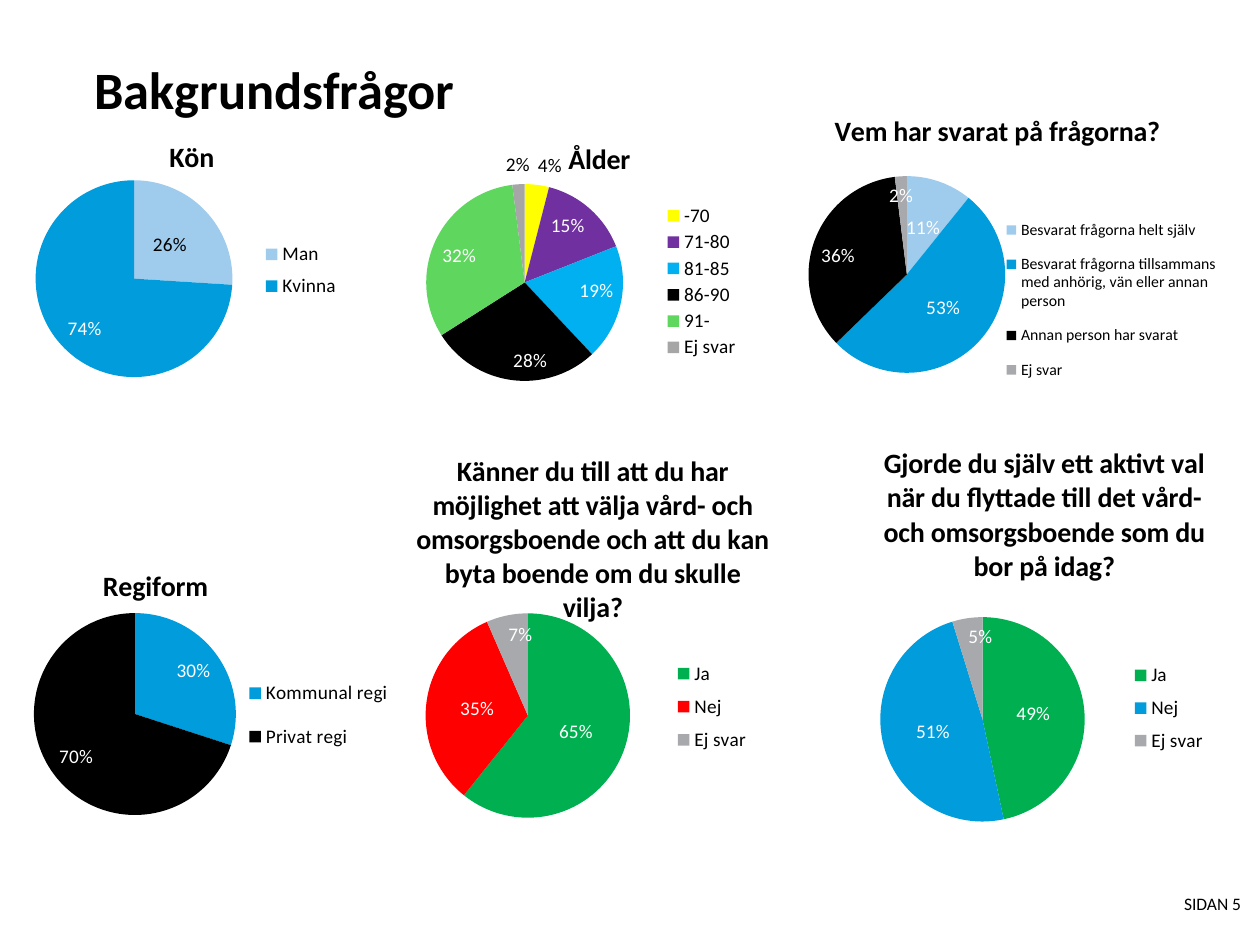
from dataclasses import dataclass

from lxml.etree import Element, SubElement
from pptx import Presentation
from pptx.chart.data import CategoryChartData
from pptx.dml.color import RGBColor
from pptx.enum.chart import XL_CHART_TYPE, XL_LABEL_POSITION, XL_LEGEND_POSITION
from pptx.enum.text import MSO_ANCHOR, PP_ALIGN
from pptx.oxml.ns import qn
from pptx.util import Pt


@dataclass(frozen=True)
class Theme:
    font: str = "Calibri"
    heading_size: int = 30
    chart_title_size: int = 16
    label_size: int = 11
    small_size: int = 9
    footer_size: int = 10
    black: str = "000000"
    white: str = "FFFFFF"
    light_blue: str = "9FCBED"
    blue: str = "009CDC"
    sky: str = "00B0F0"
    gray: str = "A7A9AC"
    mid_gray: str = "A6A6A6"
    green: str = "00B050"
    lime: str = "5FD75F"
    red: str = "FF0000"
    yellow: str = "FFFF00"
    purple: str = "7030A0"


theme = Theme()
CENTER = XL_LABEL_POSITION.CENTER
INSIDE = XL_LABEL_POSITION.INSIDE_END
OUTSIDE = XL_LABEL_POSITION.OUTSIDE_END


def write(text_frame, text, size, bold=False, align=PP_ALIGN.LEFT):
    text_frame.text = text
    paragraph = text_frame.paragraphs[0]
    paragraph.alignment = align
    font = paragraph.runs[0].font
    font.name, font.size, font.bold = theme.font, Pt(size), bold
    font.color.rgb = RGBColor.from_string(theme.black)


def place(parent, index, fractions, inner=False):
    for previous in parent.findall(qn("c:layout")):
        parent.remove(previous)
    layout = Element(qn("c:layout"))
    manual = SubElement(layout, qn("c:manualLayout"))
    if inner:
        SubElement(manual, qn("c:layoutTarget")).set("val", "inner")
    for mode in ("xMode", "yMode"):
        SubElement(manual, qn(f"c:{mode}")).set("val", "edge")
    for key, fraction in zip("xywh", fractions):
        SubElement(manual, qn(f"c:{key}")).set("val", f"{fraction:.3f}")
    parent.insert(index, layout)


presentation = Presentation()
presentation.slide_width, presentation.slide_height = Pt(720), Pt(540)
slide = presentation.slides.add_slide(presentation.slide_layouts[5])

title = slide.shapes.title
title.left, title.top, title.width, title.height = Pt(54), Pt(29.5), Pt(612), Pt(42)
footer = slide.shapes.add_textbox(Pt(481.7), Pt(508.3), Pt(227.5), Pt(16))
for shape in (title, footer):
    frame = shape.text_frame
    frame.word_wrap = True
    frame.margin_left = frame.margin_top = frame.margin_right = frame.margin_bottom = 0
    frame.vertical_anchor = MSO_ANCHOR.MIDDLE
write(title.text_frame, "Bakgrundsfrågor", theme.heading_size, bold=True)
write(footer.text_frame, "SIDAN 5", theme.footer_size, align=PP_ALIGN.RIGHT)

pies = [
    dict(title="Vem har svarat på frågorna?", box=(438.5, 49.7, 261.4, 186.5),
         title_at=(474, 61), legend=(570, 117, 135, 109), legend_size=theme.small_size,
         plot=(0.09, 0.26, 0.43, 0.63),
         slices=[("Besvarat frågorna helt själv", 0.11, theme.light_blue, CENTER),
                 ("Besvarat frågorna tillsammans med anhörig, vän eller annan person",
                  0.53, theme.blue, CENTER),
                 ("Annan person har svarat", 0.36, theme.black, INSIDE),
                 ("Ej svar", 0.02, theme.gray, INSIDE)]),
    dict(title="Kön", box=(15.8, 69.1, 199.4, 178.6),
         title_at=(94, 76), legend=(146, 134, 52, 41), plot=(0.02, 0.19, 0.57, 0.63),
         dark_labels=("Man",),
         slices=[("Man", 0.26, theme.light_blue, CENTER),
                 ("Kvinna", 0.74, theme.blue, INSIDE)]),
    dict(title="Känner du till att du har möjlighet att välja vård- och omsorgsboende "
               "och att du kan byta boende om du skulle vilja?",
         box=(205.2, 243.4, 264.2, 243.4),
         title_at=(235, 255), legend=(381, 373, 52, 62), plot=(0.14, 0.44, 0.45, 0.48),
         slices=[("Ja", 0.65, theme.green, CENTER),
                 ("Nej", 0.35, theme.red, CENTER),
                 ("Ej svar", 0.07, theme.gray, INSIDE)]),
    dict(title="Gjorde du själv ett aktivt val när du flyttade till det vård- och "
               "omsorgsboende som du bor på idag?",
         box=(472.3, 238.3, 247.7, 243.4),
         title_at=(502, 251), legend=(642, 374, 52, 61), plot=(0.12, 0.47, 0.48, 0.48),
         slices=[("Ja", 0.49, theme.green, CENTER),
                 ("Nej", 0.51, theme.blue, CENTER),
                 ("Ej svar", 0.05, theme.gray, INSIDE)]),
    dict(title="Ålder", box=(239, 71.3, 199.4, 178.6),
         title_at=(322, 77), legend=(375, 115, 52, 92), plot=(0.02, 0.19, 0.57, 0.63),
         dark_labels=("-70", "Ej svar"),
         slices=[("-70", 0.04, theme.yellow, OUTSIDE),
                 ("71-80", 0.15, theme.purple, INSIDE),
                 ("81-85", 0.19, theme.sky, INSIDE),
                 ("86-90", 0.28, theme.black, INSIDE),
                 ("91-", 0.32, theme.lime, INSIDE),
                 ("Ej svar", 0.02, theme.mid_gray, OUTSIDE)]),
    dict(title="Regiform", box=(15.1, 315.4, 213.8, 168.5),
         title_at=(56, 321), legend=(138, 378, 88, 61), plot=(0.02, 0.19, 0.54, 0.72),
         slices=[("Kommunal regi", 0.3, theme.blue, INSIDE),
                 ("Privat regi", 0.7, theme.black, INSIDE)]),
]

for pie in pies:
    left, top, width, height = pie["box"]
    data = CategoryChartData(number_format="0%")
    data.categories = [name for name, *_ in pie["slices"]]
    data.add_series("Series 1", [value for _, value, *_ in pie["slices"]])
    chart = slide.shapes.add_chart(
        XL_CHART_TYPE.PIE, Pt(left), Pt(top), Pt(width), Pt(height), data).chart
    chart.font.name, chart.font.size = theme.font, Pt(18)
    chart.font.color.rgb = RGBColor.from_string(theme.black)

    chart.has_title = True
    write(chart.chart_title.text_frame, pie["title"], theme.chart_title_size,
          bold=True, align=PP_ALIGN.CENTER)
    title_left, title_top = pie["title_at"]
    place(chart.chart_title._element, 1,
          ((title_left - left) / width, (title_top - top) / height))

    chart.has_legend = True
    legend = chart.legend
    legend.position = XL_LEGEND_POSITION.RIGHT
    legend.include_in_layout = False
    legend.font.name = theme.font
    legend.font.size = Pt(pie.get("legend_size", theme.label_size))
    legend_left, legend_top, legend_width, legend_height = pie["legend"]
    place(legend._element, 1,
          ((legend_left - left) / width, (legend_top - top) / height,
           legend_width / width, legend_height / height))
    place(chart._chartSpace.chart.plotArea, 0, pie["plot"], inner=True)

    plot = chart.plots[0]
    plot.vary_by_categories = True
    plot.has_data_labels = True
    plot.data_labels.show_value = True
    plot.data_labels.show_percentage = False
    plot.data_labels.number_format = "0%"
    plot.data_labels.number_format_is_linked = False
    for index, (name, _, color, position) in enumerate(pie["slices"]):
        point = plot.series[0].points[index]
        point.format.fill.solid()
        point.format.fill.fore_color.rgb = RGBColor.from_string(color)
        point.format.line.fill.background()
        label = point.data_label
        label_color = theme.black if name in pie.get("dark_labels", ()) else theme.white
        label.font.name, label.font.size = theme.font, Pt(theme.label_size)
        label.font.color.rgb = RGBColor.from_string(label_color)
        label.position = position

presentation.save("out.pptx")
